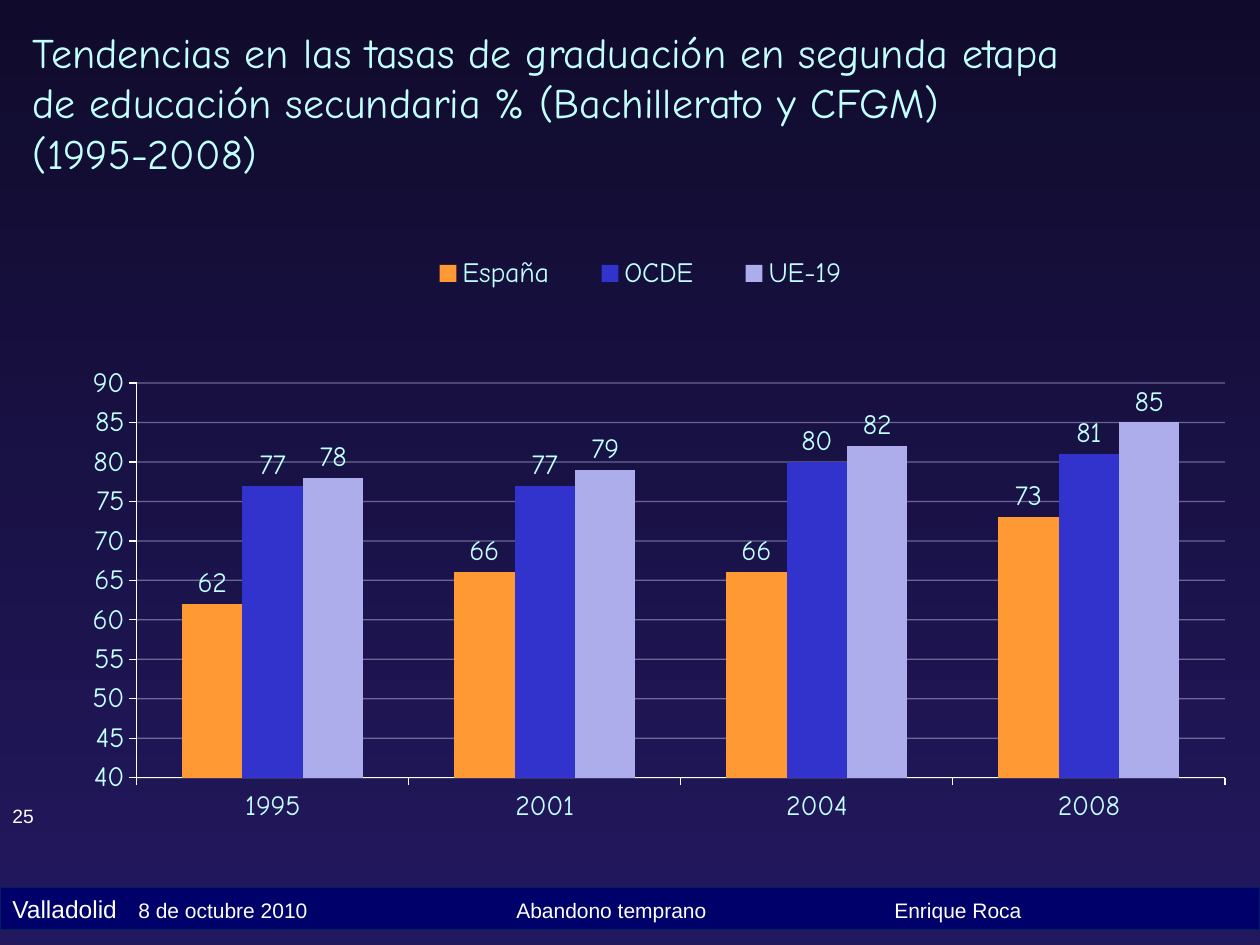
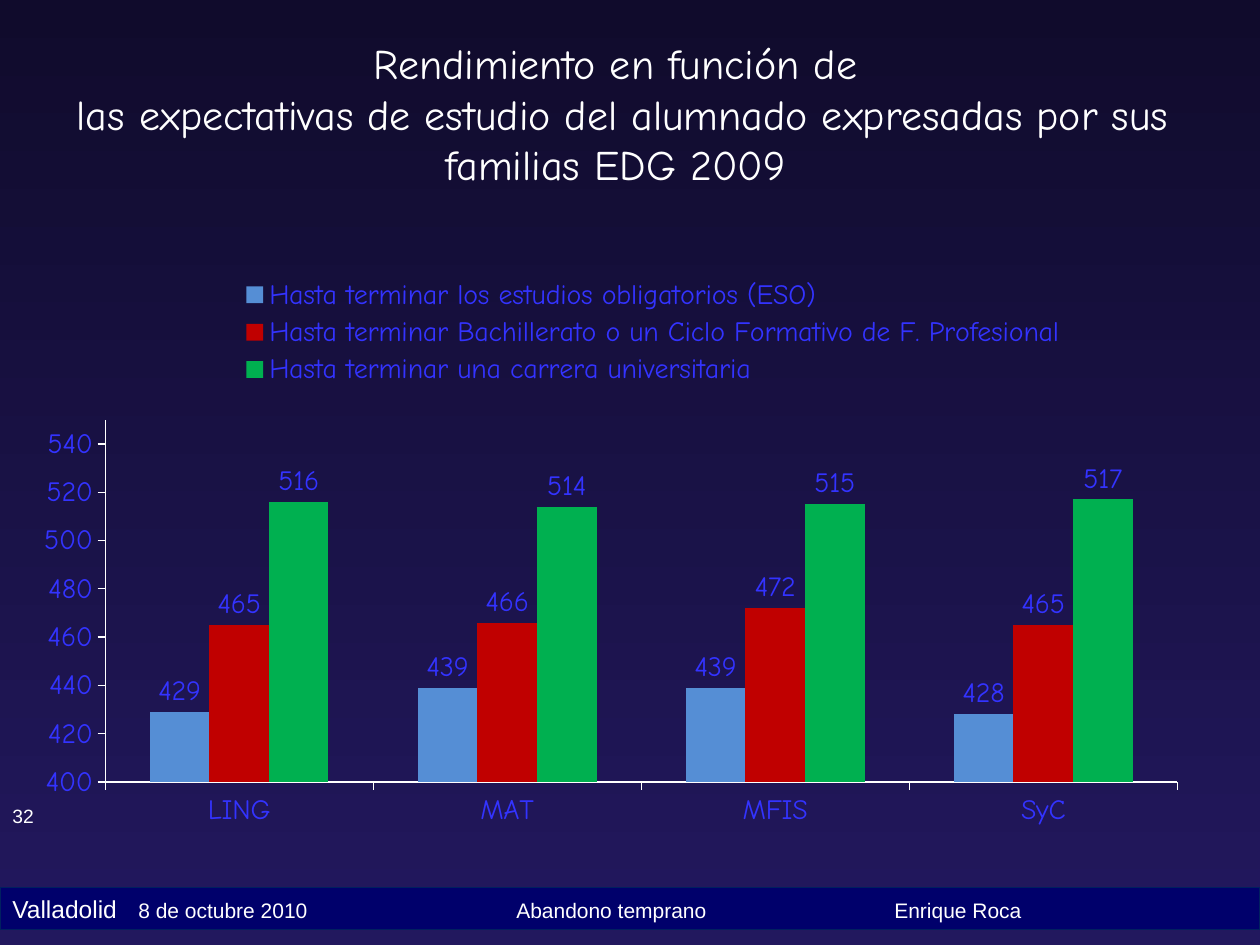
from lxml import etree
from pptx import Presentation
from pptx.chart.data import CategoryChartData
from pptx.dml.color import RGBColor
from pptx.enum import chart as charts, shapes, text
from pptx.oxml import ns
from pptx.util import Pt

NIGHT_TOP = RGBColor(0x10, 0x0B, 0x2C)
NIGHT_BOTTOM = RGBColor(0x22, 0x18, 0x5E)
BAND_BLUE = RGBColor(0x00, 0x00, 0x6B)
BAND_EDGE = RGBColor(0x00, 0x20, 0x60)
WHITE = RGBColor(0xFF, 0xFF, 0xFF)
PALE_CYAN = RGBColor(0xC2, 0xFF, 0xFF)
BRIGHT_BLUE = RGBColor(0x33, 0x33, 0xFF)
GRID_LILAC = RGBColor(0xD2, 0xD2, 0xF4)
ORANGE = RGBColor(0xFF, 0x99, 0x33)
ROYAL_BLUE = RGBColor(0x32, 0x32, 0xCD)
LILAC = RGBColor(0xAD, 0xAD, 0xEB)
SKY_BLUE = RGBColor(0x55, 0x8E, 0xD5)
RED = RGBColor(0xC0, 0x00, 0x00)
GREEN = RGBColor(0x00, 0xB0, 0x50)

BODY_FONT = "Arial"
TITLE_FONT = "Comic Neue"
SLIDE_WIDTH, SLIDE_HEIGHT = 720, 540
FOOTER_TABS = (72, 288, 504)


def set_font(font, name, size, color):
    font.name = name
    font.size = Pt(size)
    font.color.rgb = color


def set_background(master):
    fill = master.background.fill
    fill.gradient()
    fill.gradient_angle = 270
    for stop, color in zip(fill.gradient_stops, (NIGHT_TOP, NIGHT_BOTTOM)):
        stop.color.rgb = color


def add_text(slide, box, lines, font_name, size, color,
             alignment=text.PP_ALIGN.LEFT, wrap=True):
    frame = slide.shapes.add_textbox(*map(Pt, box)).text_frame
    frame.word_wrap = wrap
    frame.text = "\n".join(lines)
    for paragraph in frame.paragraphs:
        paragraph.alignment = alignment
        for run in paragraph.runs:
            set_font(run.font, font_name, size, color)
    return frame


def add_title(slide, box, lines, color, **options):
    return add_text(slide, box, lines, TITLE_FONT, 24, color, **options)


def add_footer(slide, number):
    add_text(slide, (0, 455.8, 34, 21), [str(number)], BODY_FONT, 11, WHITE)
    band = slide.shapes.add_shape(
        shapes.MSO_SHAPE.RECTANGLE, 0, Pt(507), Pt(SLIDE_WIDTH), Pt(24.2))
    band.shadow.inherit = False
    band.fill.solid()
    band.fill.fore_color.rgb = BAND_BLUE
    band.line.color.rgb = BAND_EDGE
    band.line.width = Pt(0.75)
    frame = band.text_frame
    frame.vertical_anchor = text.MSO_ANCHOR.MIDDLE
    paragraph = frame.paragraphs[0]
    paragraph.alignment = text.PP_ALIGN.LEFT
    tabs = etree.SubElement(paragraph._p.get_or_add_pPr(), ns.qn("a:tabLst"))
    for position in FOOTER_TABS:
        etree.SubElement(tabs, ns.qn("a:tab"), pos=str(Pt(position)), algn="l")
    for words, size in (
            ("Valladolid\t", 14),
            ("8 de octubre 2010\tAbandono temprano\tEnrique Roca", 12)):
        run = paragraph.add_run()
        run.text = words
        set_font(run.font, BODY_FONT, size, WHITE)


def place_manually(parent, index, place, target=None):
    for layout in parent.findall(ns.qn("c:layout")):
        parent.remove(layout)
    layout = etree.Element(ns.qn("c:layout"))
    manual = etree.SubElement(layout, ns.qn("c:manualLayout"))
    settings = [("layoutTarget", target)] if target else []
    settings += [("xMode", "edge"), ("yMode", "edge")]
    settings += zip("xywh", place)
    for tag, value in settings:
        etree.SubElement(manual, ns.qn("c:" + tag), val=str(value))
    parent.insert(index, layout)


def format_axis(axis):
    axis.major_tick_mark = charts.XL_TICK_MARK.OUTSIDE
    axis.minor_tick_mark = charts.XL_TICK_MARK.NONE
    axis.format.line.color.rgb = WHITE
    axis.format.line.width = Pt(0.75)


def add_gridlines(axis):
    line = axis.major_gridlines.format.line
    line.color.rgb = GRID_LILAC
    line.width = Pt(0.75)
    color = next(axis.major_gridlines._xAx.iter(ns.qn("a:srgbClr")))
    etree.SubElement(color, ns.qn("a:alpha"), val="44000")


def add_columns(slide, box, categories, series_rows, text_color,
                scale, plot_place, legend_place, gridlines):
    data = CategoryChartData(number_format="0")
    data.categories = categories
    for name, values, _ in series_rows:
        data.add_series(name, values)
    chart = slide.shapes.add_chart(
        charts.XL_CHART_TYPE.COLUMN_CLUSTERED, *map(Pt, box), data).chart
    set_font(chart.font, TITLE_FONT, 16, text_color)
    chart.has_title = False

    plot = chart.plots[0]
    plot.vary_by_categories = False
    plot.gap_width = 150
    plot.overlap = 0
    for series, (_, _, color) in zip(plot.series, series_rows):
        series.format.fill.solid()
        series.format.fill.fore_color.rgb = color
    plot.has_data_labels = True
    labels = plot.data_labels
    labels.show_value = True
    labels.position = charts.XL_LABEL_POSITION.OUTSIDE_END
    labels.number_format = "0"
    labels.number_format_is_linked = False

    axis = chart.value_axis
    axis.minimum_scale, axis.maximum_scale, axis.major_unit = scale
    axis.tick_labels.number_format = "0"
    axis.tick_labels.number_format_is_linked = False
    axis.has_major_gridlines = gridlines
    if gridlines:
        add_gridlines(axis)
    format_axis(axis)
    format_axis(chart.category_axis)

    chart.has_legend = True
    chart.legend.position = charts.XL_LEGEND_POSITION.TOP
    chart.legend.include_in_layout = False
    place_manually(chart.legend._element, 1, legend_place)
    place_manually(chart._chartSpace.chart.plotArea, 0, plot_place, "inner")


def build_graduation(slide):
    add_footer(slide, 25)
    add_columns(
        slide, (22.3, 118, 680.4, 382.3), ("1995", "2001", "2004", "2008"),
        (("España", (62, 66, 66, 73), ORANGE),
         ("OCDE", (77, 77, 80, 81), ROYAL_BLUE),
         ("UE-19", (78, 79, 82, 85), LILAC)),
        PALE_CYAN, (40, 90, 5), (0.082, 0.264, 0.914, 0.59),
        (0.3, 0.05, 0.41, 0.1), gridlines=True)
    add_title(
        slide, (11.5, 11.5, 648.7, 94.3),
        ("Tendencias en las tasas de graduación en segunda etapa",
         "de educación secundaria % (Bachillerato y CFGM)",
         "(1995-2008)"),
        PALE_CYAN, wrap=False)


def build_expectations(slide):
    add_footer(slide, 32)
    add_columns(
        slide, (23.8, 156.2, 671.8, 336.2), ("LING", "MAT", "MFIS", "SyC"),
        (("Hasta terminar los estudios obligatorios (ESO)",
          (429, 439, 439, 428), SKY_BLUE),
         ("Hasta terminar Bachillerato o un Ciclo Formativo de F. Profesional",
          (465, 466, 472, 465), RED),
         ("Hasta terminar una carrera universitaria",
          (516, 514, 515, 517), GREEN)),
        BRIGHT_BLUE, (400, 550, 20), (0.054, 0.249, 0.912, 0.616),
        (0.16, 0, 0.72, 0.2), gridlines=False)
    frame = add_title(
        slide, (23.8, 18, 671.8, 94.3),
        ("Rendimiento en función de",
         " las expectativas de estudio del alumnado expresadas por sus "
         "familias EDG 2009"),
        WHITE, alignment=text.PP_ALIGN.CENTER)
    frame.paragraphs[0]._p.get_or_add_pPr().set("marR", str(Pt(16)))


def main():
    presentation = Presentation()
    presentation.slide_width = Pt(SLIDE_WIDTH)
    presentation.slide_height = Pt(SLIDE_HEIGHT)
    set_background(presentation.slide_master)
    for build in (build_graduation, build_expectations):
        build(presentation.slides.add_slide(presentation.slide_layouts[6]))
    presentation.save("out.pptx")


if __name__ == "__main__":
    main()
